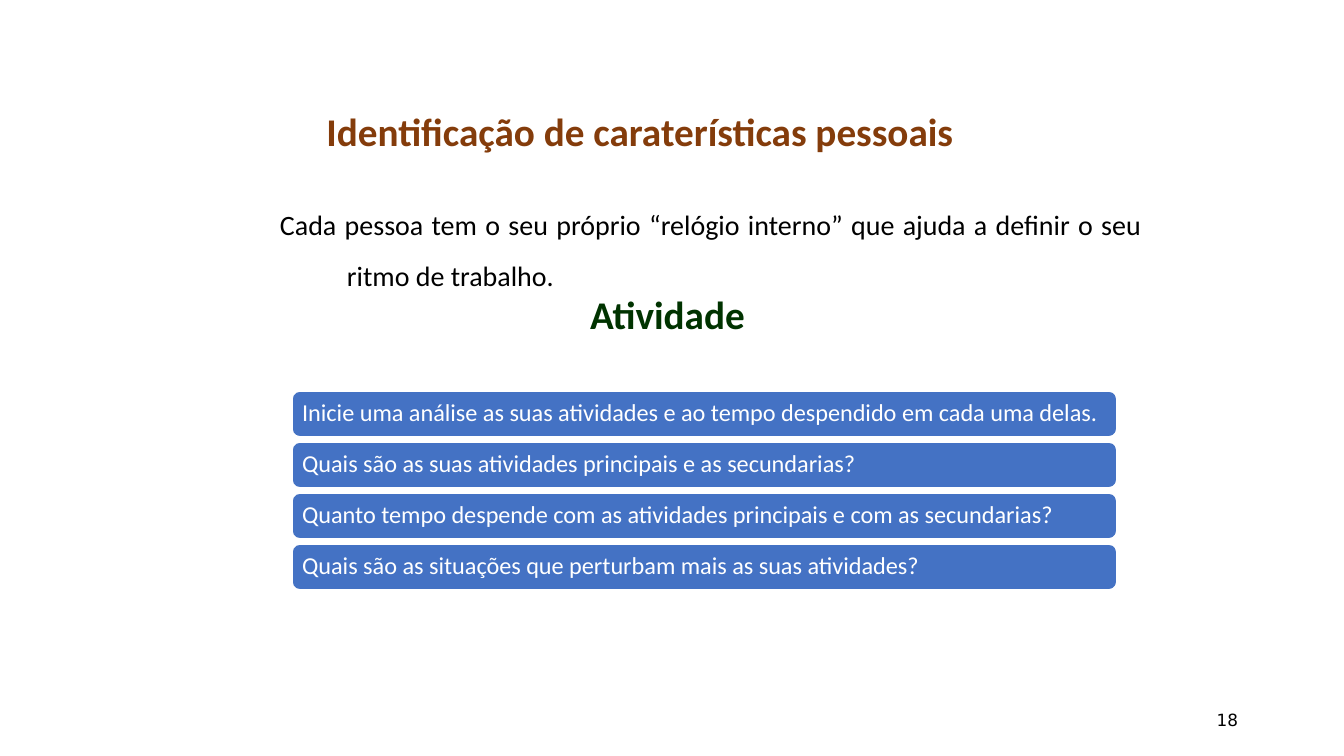
from dataclasses import dataclass

from pptx import Presentation
from pptx import util as u
from pptx.dml.color import RGBColor
from pptx.enum import shapes, text

SLIDE_WIDTH, SLIDE_HEIGHT = 1344, 756
EMU_PER_PX = u.Inches(10) / SLIDE_WIDTH

BAR_LEFT, BAR_TOP, BAR_WIDTH, BAR_HEIGHT = 292, 391, 825, 46
BAR_PITCH = 51

QUESTIONS = [
    "Inicie uma análise as suas atividades e ao tempo despendido em cada uma delas.",
    "Quais são as suas atividades principais e as secundarias?",
    "Quanto tempo despende com as atividades principais e com as secundarias?",
    "Quais são as situações que perturbam mais as suas atividades?",
]


@dataclass(frozen=True)
class Theme:
    font: str = "Calibri"
    number_font: str = "DejaVu Sans"
    title: str = "843C0B"
    activity: str = "003300"
    body: str = "000000"
    bar: str = "4472C4"
    light: str = "FFFFFF"
    heading_size: int = 21
    body_size: int = 15
    bar_size: int = 13
    number_size: int = 9


def px(length):
    return u.Emu(round(length * EMU_PER_PX))


def write_text(shape, content, *, size, color, font, bold=False,
               align=text.PP_ALIGN.LEFT, anchor=text.MSO_ANCHOR.TOP,
               margins=(13, 7), line_spacing=1.0, hanging=0):
    """Fill a shape with one paragraph; margins are (side, top and bottom) in px."""
    frame = shape.text_frame
    frame.word_wrap = True
    frame.vertical_anchor = anchor
    frame.margin_left = frame.margin_right = px(margins[0])
    frame.margin_top = frame.margin_bottom = px(margins[1])
    paragraph = frame.paragraphs[0]
    paragraph.alignment = align
    paragraph.line_spacing = line_spacing
    if hanging:
        properties = paragraph._p.get_or_add_pPr()
        properties.set("marL", str(px(hanging)))
        properties.set("indent", str(-px(hanging)))
    run = paragraph.add_run()
    run.text = content
    run.font.name = font
    run.font.size = u.Pt(size)
    run.font.bold = bold
    run.font.color.rgb = RGBColor.from_string(color)


class SlideBuilder:
    def __init__(self, slide, theme):
        self.slide = slide
        self.theme = theme

    def text_box(self, box, content, **text_format):
        shape = self.slide.shapes.add_textbox(*map(px, box))
        write_text(shape, content, **text_format)

    def heading(self, box, content, color):
        self.text_box(box, content, size=self.theme.heading_size, color=color,
                      font=self.theme.font, bold=True, align=text.PP_ALIGN.CENTER)

    def body(self, box, content):
        self.text_box(box, content, size=self.theme.body_size,
                      color=self.theme.body, font=self.theme.font,
                      align=text.PP_ALIGN.JUSTIFY, line_spacing=1.5, hanging=67)

    def page_number(self, box, content):
        self.text_box(box, content, size=self.theme.number_size,
                      color=self.theme.body, font=self.theme.number_font,
                      align=text.PP_ALIGN.RIGHT, anchor=text.MSO_ANCHOR.MIDDLE)

    def question_bar(self, box, content):
        shape = self.slide.shapes.add_shape(
            shapes.MSO_SHAPE.ROUNDED_RECTANGLE, *map(px, box))
        shape.shadow.inherit = False
        shape.fill.solid()
        shape.fill.fore_color.rgb = RGBColor.from_string(self.theme.bar)
        shape.line.color.rgb = RGBColor.from_string(self.theme.light)
        shape.line.width = u.Pt(1)
        write_text(shape, content, size=self.theme.bar_size,
                   color=self.theme.light, font=self.theme.font,
                   anchor=text.MSO_ANCHOR.MIDDLE, margins=(8, 7),
                   line_spacing=0.9)


def main():
    presentation = Presentation()
    presentation.slide_width = px(SLIDE_WIDTH)
    presentation.slide_height = px(SLIDE_HEIGHT)
    theme = Theme()
    blank_layout = presentation.slide_layouts[6]
    builder = SlideBuilder(presentation.slides.add_slide(blank_layout), theme)

    builder.page_number((949, 700, 302, 40), "18")
    builder.heading((267, 100, 746, 60),
                    "Identificação de caraterísticas pessoais", theme.title)
    builder.body((267, 184, 888, 110),
                 "Cada pessoa tem o seu próprio “relógio interno” que ajuda "
                 "a definir o seu ritmo de trabalho.")
    builder.heading((560, 283, 215, 60), "Atividade", theme.activity)
    for row, question in enumerate(QUESTIONS):
        top = BAR_TOP + row * BAR_PITCH
        builder.question_bar((BAR_LEFT, top, BAR_WIDTH, BAR_HEIGHT), question)

    presentation.save("out.pptx")


if __name__ == "__main__":
    main()
